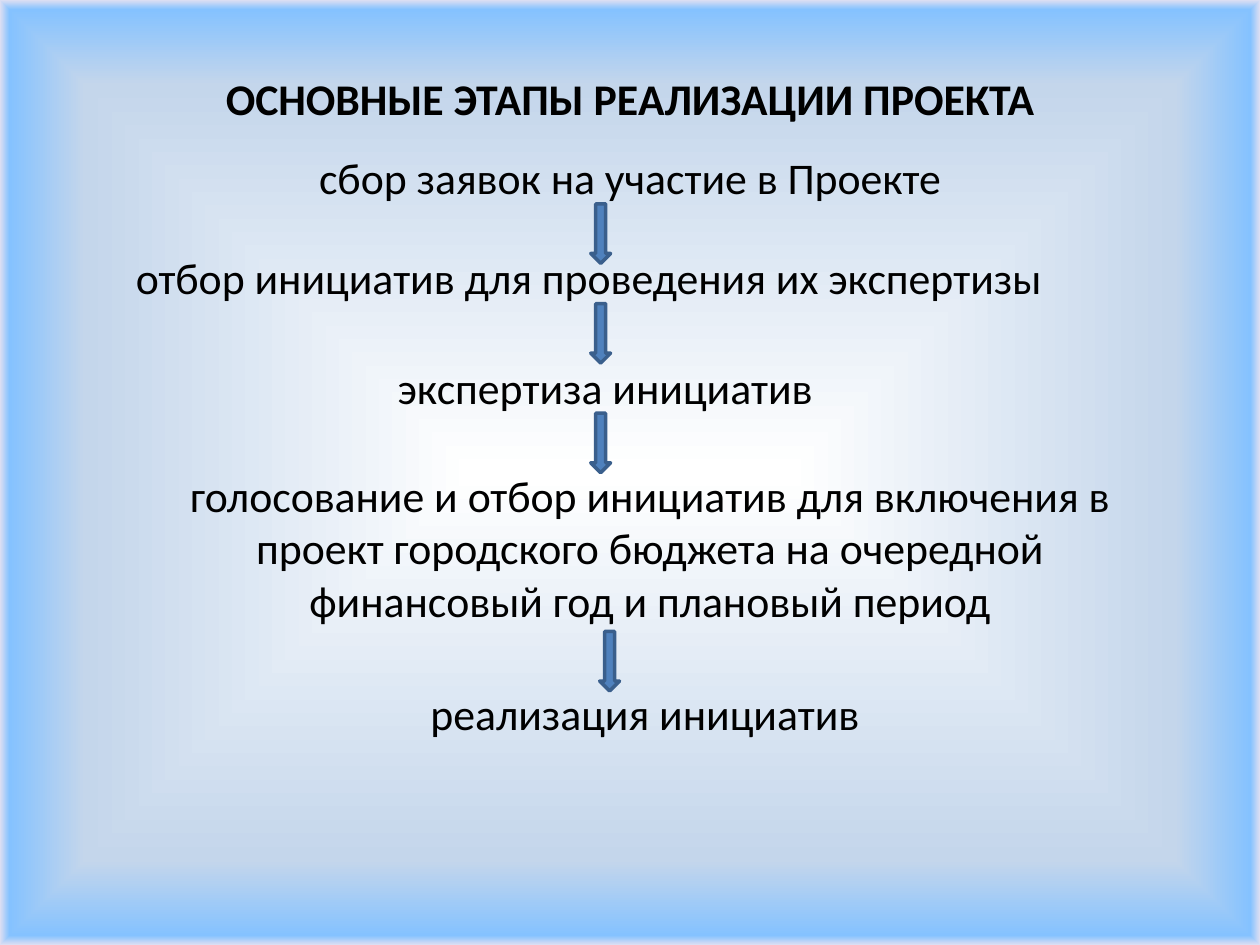
from lxml import etree
from pptx import Presentation
from pptx.dml.color import RGBColor
from pptx.enum.shapes import MSO_SHAPE
from pptx.enum.text import MSO_ANCHOR, MSO_AUTO_SIZE, PP_ALIGN
from pptx.oxml import parse_xml
from pptx.oxml.ns import nsdecls, qn
from pptx.util import Cm, Pt

CENTER = PP_ALIGN.CENTER
JUSTIFY = PP_ALIGN.JUSTIFY
DOWN_ARROW = MSO_SHAPE.DOWN_ARROW

BLACK = RGBColor(0x00, 0x00, 0x00)
ARROW_FILL = RGBColor(0x4F, 0x81, 0xBD)
ARROW_LINE = RGBColor(0x3A, 0x5F, 0x8C)
BACKGROUND_STOPS = [
    (0, RGBColor(0xFF, 0xFF, 0xFF)),
    (82, RGBColor(0xC4, 0xD6, 0xEB)),
    (98, RGBColor(0x85, 0xC2, 0xFF)),
    (100, RGBColor(0xDE, 0xDF, 0xF2)),
    (100, RGBColor(0xFF, 0xEB, 0xFA)),
]

FONT = "Calibri"
TEXT_SIZE = Pt(25)
ARROW_WIDTH, ARROW_HEIGHT = Cm(0.4), Cm(1.2)

HEADING = "ОСНОВНЫЕ ЭТАПЫ РЕАЛИЗАЦИИ ПРОЕКТА"
FIRST_STAGE = "сбор заявок на участие в Проекте"

# text, alignment, left, top, width, height in centimetres
LATER_STAGES = [
    ("отбор инициатив для проведения их экспертизы", JUSTIFY, 2.49, 4.93, 19.4, 8.81),
    ("экспертиза инициатив", CENTER, 3.3, 7.14, 17.8, 2.39),
    ("голосование и отбор инициатив для включения в проект городского бюджета "
     "на очередной финансовый год и плановый период", CENTER, 2.7, 9.32, 20.8, 4.52),
    ("реализация инициатив", CENTER, 6.5, 13.72, 13, 1.32),
]
# left, top in centimetres
ARROWS = [(11.91, 4.11), (11.91, 6.12), (11.91, 8.33), (12.09, 12.73)]


def set_background(slide):
    """Fill the background with a gradient that spreads from the slide centre."""
    stops = "".join(
        f'<a:gs pos="{position * 1000}"><a:srgbClr val="{color}"/></a:gs>'
        for position, color in BACKGROUND_STOPS
    )
    background = parse_xml(
        f'<p:bg {nsdecls("p", "a")}><p:bgPr><a:gradFill rotWithShape="1">'
        f'<a:gsLst>{stops}</a:gsLst><a:path path="shape">'
        '<a:fillToRect l="50000" t="50000" r="50000" b="50000"/></a:path>'
        '</a:gradFill><a:effectLst/></p:bgPr></p:bg>'
    )
    slide.shapes.element.addprevious(background)


def place(shape, left, top, width, height):
    shape.left, shape.top = Cm(left), Cm(top)
    shape.width, shape.height = Cm(width), Cm(height)


def format_paragraph(paragraph, alignment, bold=False):
    paragraph.alignment = alignment
    for run in paragraph.runs:
        run.font.name = FONT
        run.font.size = TEXT_SIZE
        run.font.bold = bold
        run.font.color.rgb = BLACK


def remove_bullet(paragraph):
    properties = paragraph._p.get_or_add_pPr()
    properties.set("marL", "0")
    properties.set("indent", "0")
    etree.SubElement(properties, qn("a:buNone"))


def fill_body(body):
    place(body, 1.27, 1.32, 22.86, 15.7)
    text_frame = body.text_frame
    text_frame.auto_size = MSO_AUTO_SIZE.NONE
    text_frame.vertical_anchor = MSO_ANCHOR.TOP
    text_frame.text = f"{HEADING}\n{FIRST_STAGE}"
    heading, first_stage = text_frame.paragraphs
    for paragraph, space, bold in ((heading, 0, True), (first_stage, 15, False)):
        format_paragraph(paragraph, CENTER, bold)
        paragraph.space_before = Pt(space)
        remove_bullet(paragraph)


def add_stage(slide, text, alignment, *box):
    text_box = slide.shapes.add_textbox(*map(Cm, box))
    text_frame = text_box.text_frame
    text_frame.word_wrap = True
    text_frame.text = text
    format_paragraph(text_frame.paragraphs[0], alignment)


def add_arrow(slide, left, top):
    arrow = slide.shapes.add_shape(
        DOWN_ARROW, Cm(left), Cm(top), ARROW_WIDTH, ARROW_HEIGHT)
    arrow.shadow.inherit = False
    arrow.fill.solid()
    arrow.fill.fore_color.rgb = ARROW_FILL
    arrow.line.color.rgb = ARROW_LINE
    arrow.line.width = Pt(2)


def main():
    presentation = Presentation()
    presentation.slide_width, presentation.slide_height = Cm(25.4), Cm(19.05)
    slide = presentation.slides.add_slide(presentation.slide_layouts[1])
    set_background(slide)

    title, body = slide.placeholders
    title.element.getparent().remove(title.element)
    fill_body(body)
    for arrow, stage in zip(ARROWS, LATER_STAGES):
        add_arrow(slide, *arrow)
        add_stage(slide, *stage)
    presentation.save("out.pptx")


if __name__ == "__main__":
    main()
